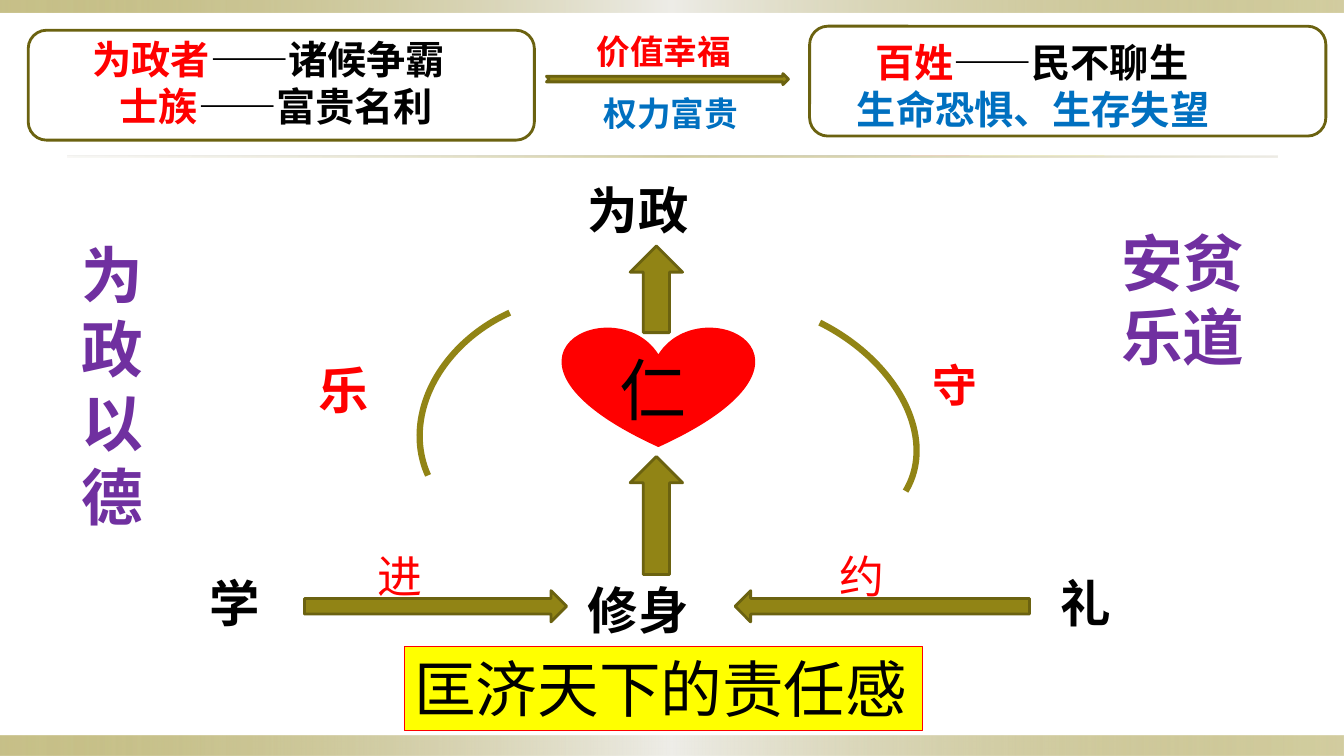
import pptx
import pptx.util
import pptx.dml.color
import pptx.enum.lang
import pptx.enum.shapes
import pptx.enum.text
import pptx.oxml
import pptx.oxml.ns
from pptx.util import Inches

FONT = "Lato"
HUES = {"red": "FF0000", "black": "000000", "blue": "0070C0", "plum": "7030A0",
        "olive": "918415", "dark": "6B6210", "yellow": "FFFF00",
        "pale": "EEEDE8", "sand": "DCD9CC"}

# Master bands: box, gradient stops (position, colour, opacity), all in percent
EDGE = [(0, "olive", 50), (50, "pale", 100), (100, "olive", 40)]
RULE = [(0, "sand", 20), (50, "olive", 40), (100, "sand", 50)]
BANDS = [((0, 7.3, 13.33, 0.2), EDGE),
         ((0, 0, 13.33, 0.12), EDGE),
         ((0.67, 1.54, 12, 0.02), RULE)]

# Shapes: preset, box, fill, line, line width
SHAPES = [
    ("HEART", (5.59, 3.25, 1.88, 1.17), "red", "red", 2),
    ("UP_ARROW", (6.25, 4.53, 0.52, 1.17), "olive", "dark", 2),
    ("UP_ARROW", (6.25, 2.44, 0.52, 0.86), "olive", "dark", 2),
    ("RIGHT_ARROW", (3.02, 5.86, 2.6, 0.31), "olive", "dark", 2),
    ("LEFT_ARROW", (7.29, 5.86, 2.92, 0.31), "olive", "dark", 2),
    ("NOTCHED_RIGHT_ARROW", (5.42, 0.73, 2.4, 0.11), "olive", "dark", 2),
    ("ROUNDED_RECTANGLE", (0.28, 0.3, 5.02, 1.09), None, "dark", 2),
    ("ROUNDED_RECTANGLE", (8.03, 0.26, 5.12, 1.09), None, "dark", 2),
]

# Arcs: box, turn in degrees, start and end adjustments
ARCS = [((4.39, 2.73, 2.27, 2.81), 245.6, (162, 0)),
        ((6.15, 3.09, 3.02, 2.11), 26.5, (162, 1.39))]

# Single words: text, box, size, colour, bold
WORDS = [
    ("修身", (5.73, 5.7, 1.67, 0.71), 36, "black", True),
    ("学", (1.98, 5.63, 1.46, 0.71), 36, "black", True),
    ("礼", (10.42, 5.63, 1.46, 0.71), 36, "black", True),
    ("仁", (6.05, 3.41, 1.46, 0.91), 48, "black", False),
    ("为政", (5.73, 1.73, 1.88, 0.71), 36, "black", True),
    ("进", (3.65, 5.39, 1.46, 0.64), 32, "red", False),
    ("约", (8.23, 5.39, 1.46, 0.64), 32, "red", False),
    ("乐", (3.06, 3.51, 1.46, 0.71), 36, "red", True),
    ("守", (9.15, 3.5, 1.46, 0.64), 32, "red", True),
    ("为政以德", (0.71, 2.3, 0.89, 3.06), 44, "plum", True),
    ("安贫乐道", (11.02, 2.18, 1.42, 3.06), 44, "plum", True),
]

# Header notes: box, size, lines of (indent, runs)
NOTES = [
    ((0.29, 0.3, 5.14, 1.51), 28, [
        (0.53, [("为政者", "red"), ("——诸候争霸", "black")]),
        (0.8, [("士族", "red"), ("——富贵名利", "black")])]),
    ((8.05, 0.33, 5.12, 1.04), 28, [
        (0.53, [("百姓", "red"), ("——民不聊生", "black")]),
        (0.35, [("生命恐惧、生存失望", "blue")])]),
    ((5.52, 0.26, 2.5, 0.5), 24, [(0.3, [("价值幸福", "red")])]),
    ((5.59, 0.87, 2.5, 0.5), 24, [(0.3, [("权力富贵", "blue")])]),
]

CLOSE = ("匡济天下的责任感", (4.01, 6.41, 5.14, 0.84), 44)


def tint(name):
    return pptx.dml.color.RGBColor.from_string(HUES[name])


def draw(kind, box, fill, line=None, width=0):
    preset = getattr(pptx.enum.shapes.MSO_SHAPE, kind)
    shape = slide.shapes.add_shape(preset, *map(Inches, box))
    shape.shadow.inherit = False
    if fill:
        shape.fill.solid()
        shape.fill.fore_color.rgb = tint(fill)
    else:
        shape.fill.background()
    if line:
        shape.line.color.rgb = tint(line)
        shape.line.width = pptx.util.Pt(width)
    else:
        shape.line.fill.background()
    return shape


def blend(shape, stops):
    marks = "".join(
        f'<a:gs pos="{pos * 1000}"><a:srgbClr val="{HUES[hue]}">'
        f'<a:alpha val="{clear * 1000}"/></a:srgbClr></a:gs>'
        for pos, hue, clear in stops)
    grad = pptx.oxml.parse_xml(
        f'<a:gradFill {pptx.oxml.ns.nsdecls("a")} rotWithShape="1">'
        f'<a:gsLst>{marks}</a:gsLst><a:lin ang="0" scaled="0"/></a:gradFill>')
    props = shape.fill._xPr
    props.replace(props.find(pptx.oxml.ns.qn("a:noFill")), grad)


def add_run(para, text, size, hue, bold):
    run = para.add_run()
    run.text = text
    font = run.font
    font.name, font.size, font.bold = FONT, pptx.util.Pt(size), bold
    font.color.rgb = tint(hue)
    font.language_id = pptx.enum.lang.MSO_LANGUAGE_ID.SIMPLIFIED_CHINESE


def write(box, size, lines, bold=True):
    frame = slide.shapes.add_textbox(*map(Inches, box)).text_frame
    frame.word_wrap = True
    for i, (indent, runs) in enumerate(lines):
        para = frame.add_paragraph() if i else frame.paragraphs[0]
        if indent:
            props = para._p.get_or_add_pPr()
            props.set("marL", str(Inches(indent)))
            props.set("indent", "0")
        for text, hue in runs:
            add_run(para, text, size, hue, bold)


deck = pptx.Presentation()
deck.slide_width, deck.slide_height = Inches(13.33), Inches(7.5)
slide = deck.slides.add_slide(deck.slide_layouts[6])

# Bands and rule
for box, stops in BANDS:
    blend(draw("RECTANGLE", box, None), stops)

# Heart, arrows, frames and arcs
for item in SHAPES:
    draw(*item)
for box, turn, ends in ARCS:
    arc = draw("ARC", box, None, "olive", 4.5)
    arc.rotation = turn
    for i, end in enumerate(ends):
        arc.adjustments[i] = end

# Words and header notes
for text, box, size, hue, bold in WORDS:
    write(box, size, [(0, [(text, hue)])], bold)
for note in NOTES:
    write(*note)

# Closing line
text, box, size = CLOSE
frame = draw("RECTANGLE", box, "yellow", "red", 0.75).text_frame
frame.word_wrap = False
frame.vertical_anchor = pptx.enum.text.MSO_ANCHOR.TOP
frame.paragraphs[0].alignment = pptx.enum.text.PP_ALIGN.LEFT
add_run(frame.paragraphs[0], text, size, "black", False)

deck.save("out.pptx")
